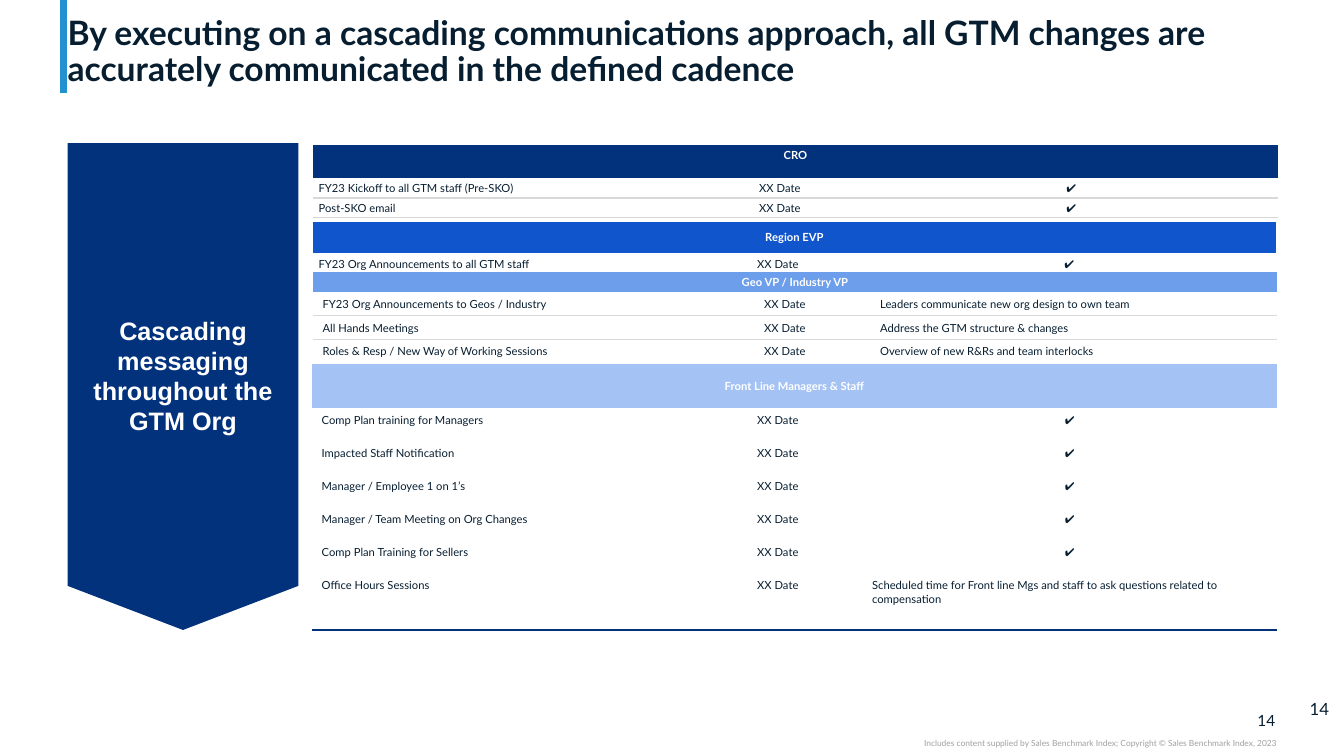
from lxml.etree import SubElement
from pptx import Presentation
from pptx.dml.color import RGBColor
from pptx.enum.shapes import MSO_CONNECTOR, MSO_SHAPE
from pptx.enum.text import MSO_ANCHOR, MSO_AUTO_SIZE, PP_ALIGN
from pptx.oxml import parse_xml
from pptx.oxml.ns import nsdecls, qn
from pptx.util import Pt

PX = 9144  # EMU per px, 100 px to the inch
INK = RGBColor(0x07, 0x1E, 0x31)
NAVY = RGBColor(0x03, 0x32, 0x7C)
ROYAL = RGBColor(0x11, 0x55, 0xCC)
SKY = RGBColor(0x6D, 0x9E, 0xEB)
PALE = RGBColor(0xA4, 0xC2, 0xF4)
ACCENT = RGBColor(0x23, 0x91, 0xCF)
RULE = RGBColor(0xD8, 0xD8, 0xD8)
GRAY = RGBColor(0xA0, 0xA0, 0xA0)
WHITE = RGBColor(0xFF, 0xFF, 0xFF)
NO_STYLE = "{2D5ABB26-0587-4C30-8999-92F81FD0307C}"
DATE = "XX Date"
CHECK = "✔"
TIGHT, ROOMY = (6, 3), (10, 5)


def format_text(paragraph, size, color, bold=False, align=PP_ALIGN.LEFT, font="Lato"):
    paragraph.alignment = align
    paragraph.font.name = font
    paragraph.font.size = Pt(size)
    paragraph.font.bold = bold
    paragraph.font.color.rgb = color


def set_frame(frame, anchor, inset_x=0, inset_y=0):
    frame.word_wrap = True
    frame.auto_size = MSO_AUTO_SIZE.NONE
    frame.vertical_anchor = anchor
    frame.margin_left = frame.margin_right = inset_x * PX
    frame.margin_top = frame.margin_bottom = inset_y * PX


prs = Presentation()
prs.slide_width, prs.slide_height = 1333 * PX, 750 * PX
slide = prs.slides.add_slide(prs.slide_layouts[5])
shapes = slide.shapes

accent_bar = shapes.add_connector(MSO_CONNECTOR.STRAIGHT, 63 * PX, 0, 63 * PX, 92 * PX)
accent_bar.line.color.rgb = ACCENT
accent_bar.line.width = Pt(5)
SubElement(accent_bar.element.spPr, qn("a:effectLst"))

title = shapes.title
title.left, title.top, title.width, title.height = 67 * PX, 4 * PX, 1199 * PX, 84 * PX
set_frame(title.text_frame, MSO_ANCHOR.BOTTOM)
title.text_frame.text = ("By executing on a cascading communications approach, all GTM "
                         "changes are accurately communicated in the defined cadence")
headline = title.text_frame.paragraphs[0]
headline.line_spacing = 0.9
format_text(headline, 24, INK, bold=True)

cascade = shapes.add_shape(MSO_SHAPE.PENTAGON, -60 * PX, 269 * PX, 483 * PX, 229 * PX)
cascade.rotation = 90
cascade.adjustments[0] = 0.191
cascade.shadow.inherit = False
cascade.fill.solid()
cascade.fill.fore_color.rgb = NAVY
cascade.line.fill.background()

# left, top, width, height, anchor, insets, text, size, color, bold, align, font
labels = [
    (67, 142, 229, 461, MSO_ANCHOR.MIDDLE, ROOMY,
     "Cascading messaging throughout the GTM Org", 18, WHITE, True, PP_ALIGN.CENTER, "Arial"),
    (1232, 705, 33, 19, MSO_ANCHOR.MIDDLE, (0, 0),
     "14", 11, INK, False, PP_ALIGN.RIGHT, "Lato"),
    (1299, 693, 34, 20, MSO_ANCHOR.MIDDLE, (0, 0),
     "14", 12, INK, False, PP_ALIGN.LEFT, "Lato"),
    (750, 732, 516, 10, MSO_ANCHOR.TOP, (0, 0),
     "Includes content supplied by Sales Benchmark Index; Copyright © Sales Benchmark Index, 2023",
     6, GRAY, False, PP_ALIGN.RIGHT, "Lato"),
]
for left, top, width, height, anchor, insets, text, size, color, bold, align, font in labels:
    frame = shapes.add_textbox(left * PX, top * PX, width * PX, height * PX).text_frame
    set_frame(frame, anchor, *insets)
    frame.text = text
    format_text(frame.paragraphs[0], size, color, bold, align, font)

# left, top, column widths, row heights, band color, band anchor, body anchor,
# body insets, rules below rows {row: (color, points)}, band name, [(activity, note)]
# Rows beyond the listed activities stay empty.
levels = [
    (310, 144, (380, 167, 411), (33, 19, 19, 18, 18), NAVY, MSO_ANCHOR.TOP, MSO_ANCHOR.MIDDLE,
     TIGHT, {1: (RULE, 1), 2: (RULE, 1)}, "CRO", [
         ("FY23 Kickoff to all GTM staff (Pre-SKO)", CHECK),
         ("Post-SKO email ", CHECK)]),
    (310, 220, (378, 167, 411), (31, 22), ROYAL, MSO_ANCHOR.MIDDLE, MSO_ANCHOR.MIDDLE,
     TIGHT, {}, "Region EVP", [
         ("FY23 Org Announcements to all GTM staff", CHECK)]),
    (310, 270, (384, 169, 404), (20, 23, 23, 23), SKY, MSO_ANCHOR.MIDDLE, MSO_ANCHOR.TOP,
     ROOMY, {1: (RULE, 1), 2: (RULE, 1)}, "Geo VP / Industry VP", [
         ("FY23 Org Announcements to Geos / Industry",
          "Leaders communicate new org design to own team"),
         ("All Hands Meetings", "Address the GTM structure & changes"),
         ("Roles & Resp / New Way of Working Sessions",
          "Overview of new R&Rs and team interlocks")]),
    (309, 361, (379, 167, 412), (44, 33, 33, 32, 33, 33, 56), PALE, MSO_ANCHOR.MIDDLE,
     MSO_ANCHOR.TOP, ROOMY, {6: (NAVY, 1.5)}, "Front Line Managers & Staff", [
         ("Comp Plan training for Managers", CHECK),
         ("Impacted Staff Notification", CHECK),
         ("Manager / Employee 1 on 1’s", CHECK),
         ("Manager / Team Meeting on Org Changes", CHECK),
         ("Comp Plan Training for Sellers ", CHECK),
         ("Office Hours Sessions",
          "Scheduled time for Front line Mgs and staff to ask questions "
          "related to compensation")]),
]
for (left, top, widths, heights, band_color, band_anchor, body_anchor,
     body_insets, rules, band_name, activities) in levels:
    graphic = shapes.add_table(len(heights), len(widths), left * PX, top * PX,
                               sum(widths) * PX, sum(heights) * PX)
    table = graphic.table
    table.first_row = table.horz_banding = False
    next(graphic.element.iter(qn("a:tableStyleId"))).text = NO_STYLE
    for column, width in zip(table.columns, widths):
        column.width = width * PX
    for row, height in zip(table.rows, heights):
        row.height = height * PX
    table.cell(0, 0).merge(table.cell(0, 2))

    grid = [(band_name, "", "")] + [(activity, DATE, note) for activity, note in activities]
    grid += [("", "", "")] * (len(heights) - len(grid))
    for r, texts in enumerate(grid):
        is_band = r == 0
        inset_x, inset_y = TIGHT if is_band else body_insets
        for c, text in enumerate(texts):
            cell = table.cell(r, c)
            cell.text = text
            cell.vertical_anchor = band_anchor if is_band else body_anchor
            cell.margin_left = cell.margin_right = inset_x * PX
            cell.margin_top = cell.margin_bottom = inset_y * PX
            centered = is_band or c == 1 or text == CHECK
            format_text(cell.text_frame.paragraphs[0], 8, WHITE if is_band else INK, is_band,
                        PP_ALIGN.CENTER if centered else PP_ALIGN.LEFT)
            if is_band:
                cell.fill.solid()
                cell.fill.fore_color.rgb = band_color
            else:
                cell.fill.background()
            if r in rules:
                color, points = rules[r]
                cell._tc.get_or_add_tcPr().insert(0, parse_xml(
                    f'<a:lnB {nsdecls("a")} w="{Pt(points)}"><a:solidFill>'
                    f'<a:srgbClr val="{color}"/></a:solidFill></a:lnB>'))

prs.save("out.pptx")
